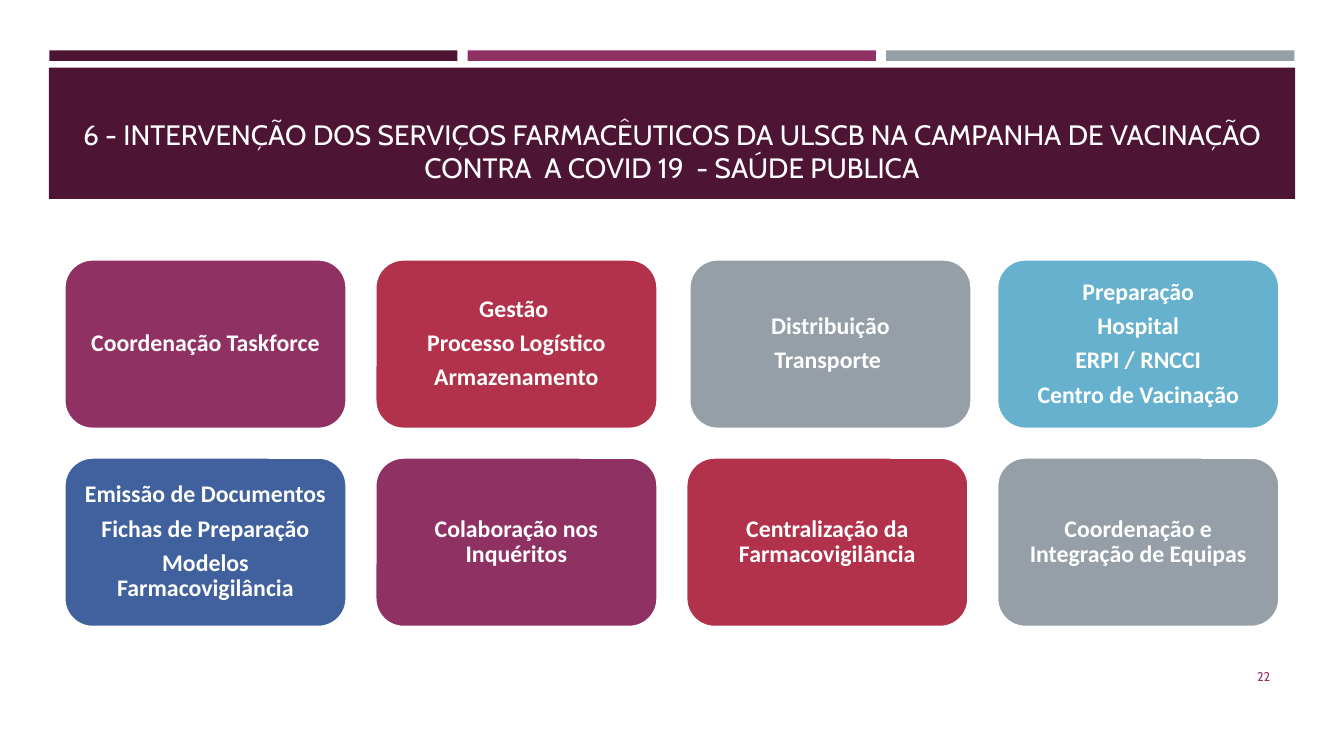
import pptx
import pptx.dml.color
import pptx.enum.shapes
import pptx.enum.text
import pptx.util

Pt = pptx.util.Pt
RGB = pptx.dml.color.RGBColor
FORM = pptx.enum.shapes.MSO_SHAPE
ALIGN = pptx.enum.text.PP_ALIGN
ANCHOR = pptx.enum.text.MSO_ANCHOR

DARK = RGB(0x4D, 0x14, 0x34)
PLUM = RGB(0x90, 0x31, 0x63)
RED = RGB(0xB2, 0x32, 0x4B)
GREY = RGB(0x96, 0x9F, 0xA7)
SKY = RGB(0x66, 0xB1, 0xCE)
BLUE = RGB(0x40, 0x61, 0x9D)
WHITE = RGB(0xFF, 0xFF, 0xFF)

TITLE = ("6 - INTERVENÇÃO DOS SERVIÇOS FARMACÊUTICOS DA ULSCB NA CAMPANHA "
         "DE VACINAÇÃO CONTRA  A COVID 19  - SAÚDE PUBLICA")

CARDS = [
    [
        (PLUM, ["Coordenação Taskforce"]),
        (RED, ["Gestão ", "Processo Logístico", "Armazenamento"]),
        (GREY, ["Distribuição", "Transporte "]),
        (SKY, ["Preparação", "Hospital", "ERPI / RNCCI", "Centro de Vacinação"]),
    ],
    [
        (BLUE, ["Emissão de Documentos", "Fichas de Preparação",
                "Modelos Farmacovigilância"]),
        (PLUM, ["Colaboração nos Inquéritos"]),
        (RED, ["Centralização da Farmacovigilância"]),
        (GREY, ["Coordenação e Integração de Equipas"]),
    ],
]
NUDGE = {(0, 2): 2.2}

HEAD = {
    "frame": {"vertical_anchor": ANCHOR.BOTTOM},
    "para": {"alignment": ALIGN.CENTER},
    "font": {"name": "Cabin", "size": Pt(20)},
    "color": WHITE,
}
PAGE = {
    "frame": {"vertical_anchor": ANCHOR.MIDDLE},
    "para": {"alignment": ALIGN.RIGHT, "space_after": Pt(6)},
    "font": {"name": "Cabin", "size": Pt(9)},
    "color": PLUM,
}
CARD = {
    "frame": {"vertical_anchor": ANCHOR.MIDDLE,
              "margin_left": Pt(5), "margin_right": Pt(5),
              "margin_top": Pt(5), "margin_bottom": Pt(5)},
    "para": {"alignment": ALIGN.CENTER, "line_spacing": 0.9,
             "space_after": Pt(6)},
    "font": {"name": "Calibri", "size": Pt(17), "bold": True},
    "color": WHITE,
}


def apply(item, values):
    for name, value in values.items():
        setattr(item, name, value)


def write(frame, lines, style):
    frame.word_wrap = True
    apply(frame, style["frame"])
    for index, line in enumerate(lines):
        para = frame.add_paragraph() if index else frame.paragraphs[0]
        apply(para, style["para"])
        run = para.add_run()
        run.text = line
        apply(run.font, style["font"])
        run.font.color.rgb = style["color"]


def add_block(slide, form, box, fill):
    shape = slide.shapes.add_shape(form, *map(Pt, box))
    shape.shadow.inherit = False
    shape.fill.solid()
    shape.fill.fore_color.rgb = fill
    shape.line.fill.background()
    return shape


def add_card(slide, box, fill, lines):
    card = add_block(slide, FORM.ROUNDED_RECTANGLE, box, fill)
    card.line.color.rgb = WHITE
    card.line.width = Pt(1.75)
    write(card.text_frame, lines, CARD)


def add_text(slide, box, text, style):
    label = slide.shapes.add_textbox(*map(Pt, box))
    write(label.text_frame, [text], style)


def main():
    deck = pptx.Presentation()
    apply(deck, {"slide_width": Pt(960), "slide_height": Pt(540)})
    slide = deck.slides.add_slide(deck.slide_layouts[6])

    for index, fill in enumerate([DARK, PLUM, GREY]):
        add_block(slide, FORM.RECTANGLE,
                  (35.2 + 298.9 * index, 36, 291.6, 7.5), fill)
    add_block(slide, FORM.RECTANGLE, (34.9, 48.3, 890.3, 93.8), DARK)
    add_text(slide, (46, 55.4, 868, 80), TITLE, HEAD)

    for row, cards in enumerate(CARDS):
        for col, (fill, lines) in enumerate(cards):
            left = 46 + 222.1 * col + NUDGE.get((row, col), 0)
            box = (left, 185.3 + 141.5 * row, 201.6, 121)
            add_card(slide, box, fill, lines)

    add_text(slide, (831.6, 468.7, 82.8, 28.8), "22", PAGE)
    deck.save("out.pptx")


if __name__ == "__main__":
    main()
